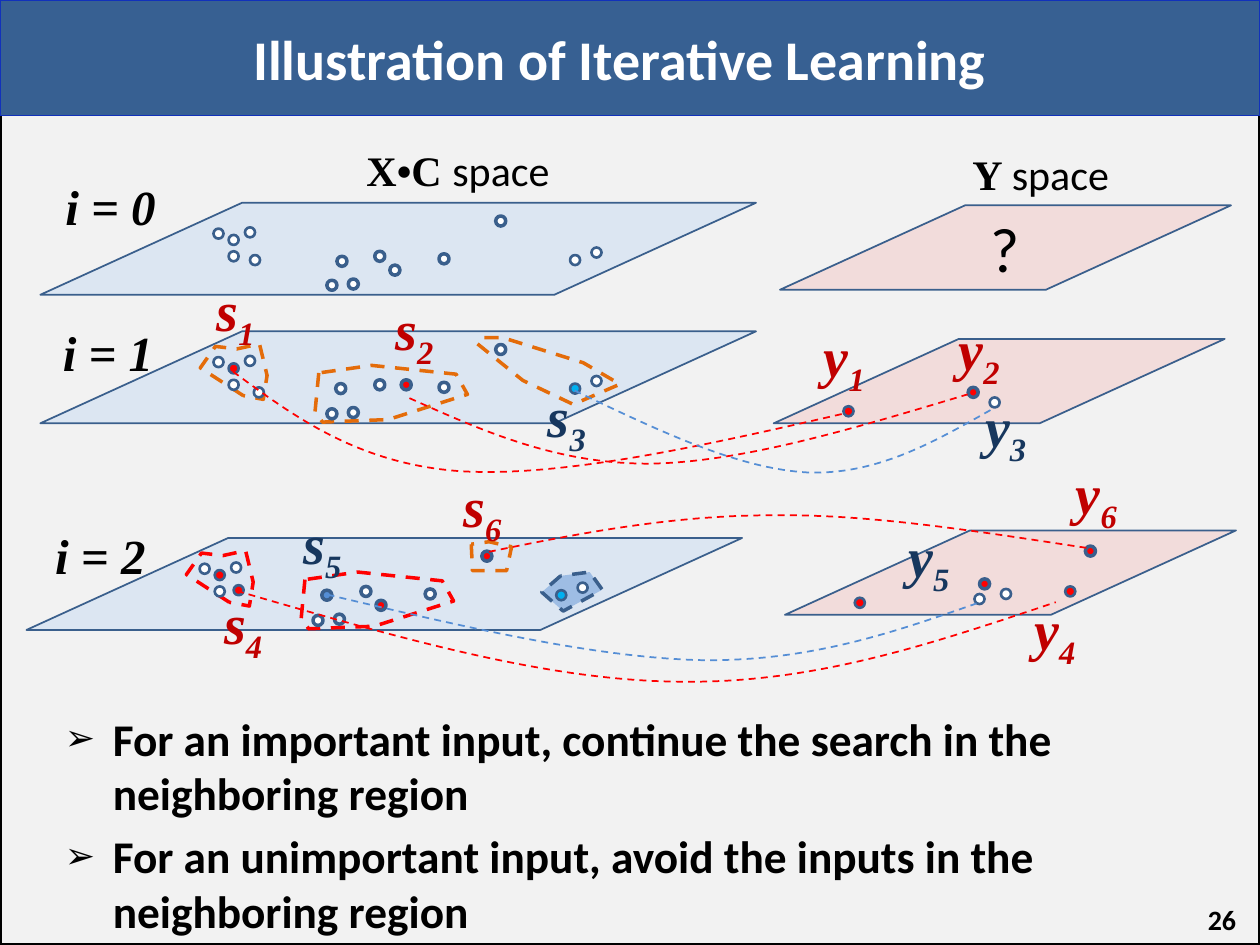
from lxml import etree
from pptx import Presentation
from pptx.dml.color import RGBColor
from pptx.enum.dml import MSO_LINE
from pptx.enum.shapes import MSO_SHAPE
from pptx.enum.text import MSO_ANCHOR, MSO_AUTO_SIZE as AutoSize, PP_ALIGN
from pptx.oxml.ns import qn
from pptx.util import Inches, Pt

# The slide is a grid of 100 columns by 75 rows
UNIT = Inches(0.1)
COLUMNS, ROWS = 100, 75
BANNER_ROWS = 9.15
SANS, SERIF = "Calibri", "Times New Roman"

NAVY = RGBColor(0x1F, 0x49, 0x7D)
BANNER = RGBColor(0x37, 0x60, 0x92)
BANNER_EDGE = RGBColor(0x11, 0x31, 0xBB)
PAPER = RGBColor(0xF2, 0xF2, 0xF2)
INPUT_FILL = RGBColor(0xDC, 0xE6, 0xF2)
OUTPUT_FILL = RGBColor(0xF2, 0xDC, 0xDB)
EDGE = RGBColor(0x3A, 0x5F, 0x8C)
BLACK = RGBColor(0, 0, 0)
WHITE = RGBColor(0xFF, 0xFF, 0xFF)
RED = RGBColor(0xFF, 0, 0)
CYAN = RGBColor(0, 0xB0, 0xF0)
BLUE = RGBColor(0x55, 0x8E, 0xD5)
ORANGE = RGBColor(0xE4, 0x6C, 0x0A)
DARK_RED = RGBColor(0xC0, 0, 0)
DARK_BLUE = RGBColor(0x17, 0x37, 0x5E)

# Samples, relative to the corner of an input plane: column, row, ring width
SAMPLES = {
    "left a": (14.1, 2.4, 1.5), "left b": (16.6, 2.3, 1.5),
    "left c": (15.3, 4.2, 1.5), "left d": (15.3, 2.9, 1.5),
    "left e": (17, 4.5, 1.5),
    "middle a": (23.8, 4.5, 2), "middle b": (23.1, 6.5, 2),
    "middle c": (24.8, 6.4, 2), "middle d": (26.9, 4.2, 2),
    "middle e": (28.1, 5.3, 2), "middle f": (32, 4.4, 2),
    "top": (36.5, 1.4, 2),
    "right a": (42.4, 4.5, 1.5), "right b": (44.1, 3.9, 1.5),
}

# Regions around groups of samples, relative to the same corner
LEFT_REGION = [(16.1, 5.1), (12.7, 2.9), (13.9, 1.2), (15.6, 1.4),
               (17.4, 1), (18, 3.5), (17.7, 5.4)]
MIDDLE_REGION = [(22.1, 3.3), (21.8, 6.4), (22.4, 7.2), (27.6, 7),
                 (33.9, 5), (33, 3.4), (26.3, 2.7)]
RIGHT_REGION = [(34.7, 1), (38.3, 3.9), (42.3, 5.8), (46, 4.2),
                (43.1, 2.5), (36.7, 0.5), (35.2, 0.5)]
TOP_REGION = [(35.3, 0.5), (35.4, 2.6), (38.1, 2.6), (38.5, 0.7), (36.7, 0.3)]
AVOIDED_REGION = [(42.4, 3), (40.9, 4.3), (42.6, 5.8), (45.7, 4.1), (44.7, 2.7)]

# Regions of the two later iterations: points, line colour, fill
FIRST_REGIONS = [(LEFT_REGION, ORANGE, None), (MIDDLE_REGION, ORANGE, None),
                 (RIGHT_REGION, ORANGE, None)]
SECOND_REGIONS = [(LEFT_REGION, RED, None), (MIDDLE_REGION, RED, None),
                  (TOP_REGION, ORANGE, None), (AVOIDED_REGION, EDGE, BLUE)]

# Outputs, relative to the corner of an output plane: column, row, width, colour
OUTPUTS = [(15.8, 4.2, 2, RED), (17.5, 5, 1.5, WHITE), (5.9, 5.7, 1.5, RED)]
NEW_OUTPUTS = [(22.6, 4.8, 1.5, RED), (24.2, 1.6, 2, RED), (15.4, 5.4, 1.5, WHITE)]

# Links from inputs to outputs: start, then two cubic segments
LINKS = [
    (RED, [(18.5, 29.5), (23.4, 33.1), (28.4, 36.8), (36.5, 37.4),
           (44.6, 37.9), (55.8, 35.4), (67.1, 32.8)]),
    (RED, [(32.5, 31.6), (38.3, 34.2), (44.1, 36.8), (51.5, 36.8),
           (58.9, 36.7), (67.8, 34), (76.8, 31.3)]),
    (BLUE, [(45.6, 31), (52.1, 34.1), (58.5, 37.2), (64.1, 37.5),
            (69.6, 37.7), (74.1, 35.1), (78.7, 32.5)]),
    (BLUE, [(26, 47.2), (36.6, 49.7), (47.1, 52.2), (55.7, 52.4),
            (64.3, 52.5), (70.9, 50.2), (77.5, 47.9)]),
    (RED, [(38.8, 43.8), (46.1, 42.3), (53.4, 40.9), (61.3, 40.9),
           (69.2, 40.8), (77.7, 42.2), (86.3, 43.5)]),
    (RED, [(18.8, 46.9), (30.9, 50.4), (43, 54), (53.8, 54.1),
           (64.7, 54.3), (74.2, 51), (83.8, 47.8)]),
]

# Labels: letter, subscript, left, top, colour
LABELS = [
    ("s", "1", 16.2, 21.4, DARK_RED), ("s", "2", 30.4, 22.9, DARK_RED),
    ("s", "3", 42.5, 29.8, DARK_BLUE), ("s", "4", 16.8, 46.2, DARK_RED),
    ("s", "5", 23.1, 39.9, DARK_BLUE), ("s", "6", 35.8, 36.9, DARK_RED),
    ("y", "1", 64.4, 25, DARK_RED), ("y", "2", 75.1, 24.5, DARK_RED),
    ("y", "3", 77.2, 30.6, DARK_BLUE), ("y", "4", 81.1, 46.7, DARK_RED),
    ("y", "5", 71.1, 40.9, DARK_BLUE), ("y", "6", 84.4, 35.9, DARK_RED),
]


def grid(*values):
    return [round(value * UNIT) for value in values]


def style(shape, fill, line, width, dashed=False):
    shape.shadow.inherit = False
    if fill is None:
        shape.fill.background()
    else:
        shape.fill.solid()
        shape.fill.fore_color.rgb = fill
    shape.line.color.rgb = line
    shape.line.width = Pt(width)
    if dashed:
        shape.line.dash_style = MSO_LINE.DASH
    return shape


def add_preset(slide, kind, box, fill, line, width):
    return style(slide.shapes.add_shape(kind, *grid(*box)), fill, line, width)


def format_run(run, size, color, font=SANS, bold=False, italic=False):
    run.font.size, run.font.name = Pt(size), font
    run.font.bold, run.font.italic = bold, italic
    run.font.color.rgb = color


def add_text(slide, box, parts, wrap=False):
    """Add a text box; each part is a text and the format of its run."""
    shape = slide.shapes.add_textbox(*grid(*box))
    frame = shape.text_frame
    frame.word_wrap, frame.auto_size = wrap, AutoSize.SHAPE_TO_FIT_TEXT
    for text, formatting in parts:
        run = frame.paragraphs[0].add_run()
        run.text = text
        format_run(run, **formatting)
    return frame


def add_dot(slide, origin, column, row, width, fill):
    box = (origin[0] + column - 0.36, origin[1] + row - 0.36, 0.8, 0.8)
    add_preset(slide, MSO_SHAPE.OVAL, box, fill, EDGE, width)


def add_plane(slide, box, fill):
    plane = add_preset(slide, MSO_SHAPE.PARALLELOGRAM, box, fill, EDGE, 1)
    plane.adjustments[0] = 2.193


def add_outline(slide, points, line, width, origin=(0, 0), fill=None, closed=True):
    corners = [grid(origin[0] + x, origin[1] + y) for x, y in points]
    builder = slide.shapes.build_freeform(*corners[0])
    builder.add_line_segments(corners[1:], close=closed)
    return style(builder.convert_to_shape(), fill, line, width, dashed=True)


def add_region(slide, origin, points, line, fill):
    region = add_outline(slide, points, line, 2, origin, fill)
    if fill is not None:
        color = region._element.spPr.find(qn("a:solidFill"))[0]
        etree.SubElement(color, qn("a:alpha"), val="46000")


def add_link(slide, color, points):
    """Add a dashed curve, turning each three points into a cubic segment."""
    shape = add_outline(slide, points, color, 1, closed=False)
    outline = next(shape._element.iter(qn("a:path")))
    lines = outline.findall(qn("a:lnTo"))
    for start in range(0, len(lines), 3):
        curve = etree.SubElement(outline, qn("a:cubicBezTo"))
        for line in lines[start:start + 3]:
            curve.append(line[0])
            outline.remove(line)


def add_iteration(slide, name, name_at, input_at, output_at,
                  fills, moved, regions=(), outputs=()):
    """Add one iteration: its name, both planes, their regions and dots."""
    add_plane(slide, (*input_at, 56.8, 7.3), INPUT_FILL)
    add_plane(slide, (*output_at, 35.8, 6.7), OUTPUT_FILL)
    for region in regions:
        add_region(slide, input_at, *region)
    for key, (column, row, width) in SAMPLES.items():
        column, row = moved.get(key, (column, row))
        add_dot(slide, input_at, column, row, width, fills.get(key, WHITE))
    for output in outputs:
        add_dot(slide, output_at, *output)
    add_text(slide, (*name_at, 9.3, 5.7),
             [(name, dict(size=28, color=BLACK, font=SERIF, bold=True, italic=True))])


def add_iterations(slide):
    add_iteration(slide, "i = 0", (4.2, 13.5), (3.2, 16.1), (61.9, 16.3), {},
                  {"middle a": (23.9, 4.6)})
    add_iteration(slide, "i = 1", (4, 25.1), (3.2, 26.3), (61.4, 26.9),
                  {"left d": RED, "middle e": RED, "right a": CYAN},
                  {"left e": (17.3, 4.8), "middle e": (29, 4.2)},
                  FIRST_REGIONS, OUTPUTS)
    add_iteration(slide, "i = 2", (3.4, 41.2), (2.1, 42.7), (62.3, 42.1),
                  {"left d": RED, "left e": RED, "middle a": BLUE, "middle c": None,
                   "middle e": RED, "top": RED, "right a": CYAN},
                  {"left e": (16.8, 4.1)}, SECOND_REGIONS, OUTPUTS + NEW_OUTPUTS)


def add_labels(slide):
    for letter, index, left, top, color in LABELS:
        look = dict(size=32, color=color, font=SERIF, bold=True, italic=True)
        frame = add_text(slide, (left, top, 6.7, 6.4), [(letter, look), (index, look)], True)
        frame.paragraphs[0].runs[1].font._element.set("baseline", "-25000")
    for name, box in (("X•C ", (28.1, 11, 17.8, 5)), ("Y ", (76.2, 11.3, 13.7, 5))):
        add_text(slide, box, [(name, dict(size=24, color=BLACK, font=SERIF, bold=True)),
                              ("space", dict(size=24, color=BLACK))])
    add_text(slide, (77.6, 16.1, 4.4, 7.1), [("?", dict(size=36, color=BLACK))])


def place(shape, box):
    shape.left, shape.top, shape.width, shape.height = grid(*box)
    shape.text_frame.auto_size = AutoSize.NONE
    return shape.text_frame


def add_frame(slide):
    """Add the page and banner behind the title, and the page number."""
    page = add_preset(slide, MSO_SHAPE.RECTANGLE, (0, 0, COLUMNS, ROWS), PAPER, BLACK, 2)
    banner = add_preset(slide, MSO_SHAPE.RECTANGLE, (0, 0, COLUMNS, BANNER_ROWS),
                        BANNER, BANNER_EDGE, 0.75)
    for shape in (banner, page):
        slide.shapes._spTree.insert(2, shape._element)
    title = place(slide.shapes.title, (1.7, 0, 95, 9.2))
    title.text = "Illustration of Iterative Learning"
    title.vertical_anchor = MSO_ANCHOR.MIDDLE
    title.paragraphs[0].alignment = PP_ALIGN.CENTER
    format_run(title.paragraphs[0].runs[0], 32, WHITE, bold=True)
    number = add_text(slide, (75.8, 71, 23.3, 4),
                      [("26", dict(size=16, color=BLACK, bold=True))], True)
    number.auto_size, number.vertical_anchor = AutoSize.NONE, MSO_ANCHOR.MIDDLE
    number.paragraphs[0].alignment = PP_ALIGN.RIGHT


def add_conclusions(slide):
    body = place(slide.placeholders[1], (4.15, 55.9, 91.7, 16.7))
    body.text = ("For an important input, continue the search in the neighboring region\n"
                 "For an unimportant input, avoid the inputs in the neighboring region")
    for paragraph in body.paragraphs:
        paragraph.space_before, paragraph.line_spacing = Pt(5.2), 1.0
        format_run(paragraph.runs[0], 25.9, BLACK, bold=True)
        properties = paragraph._p.get_or_add_pPr()
        properties.set("marL", str(Inches(0.38)))
        properties.set("indent", str(-Inches(0.38)))
        etree.SubElement(properties, qn("a:buSzPct"), val="80000")
        etree.SubElement(properties, qn("a:buChar"), char="➢")


def main():
    presentation = Presentation()
    presentation.slide_width, presentation.slide_height = grid(COLUMNS, ROWS)
    slide = presentation.slides.add_slide(presentation.slide_layouts[1])
    slide.background.fill.solid()
    slide.background.fill.fore_color.rgb = NAVY
    add_frame(slide)
    add_conclusions(slide)
    add_iterations(slide)
    for color, points in LINKS:
        add_link(slide, color, points)
    add_labels(slide)
    presentation.save("out.pptx")


if __name__ == "__main__":
    main()
